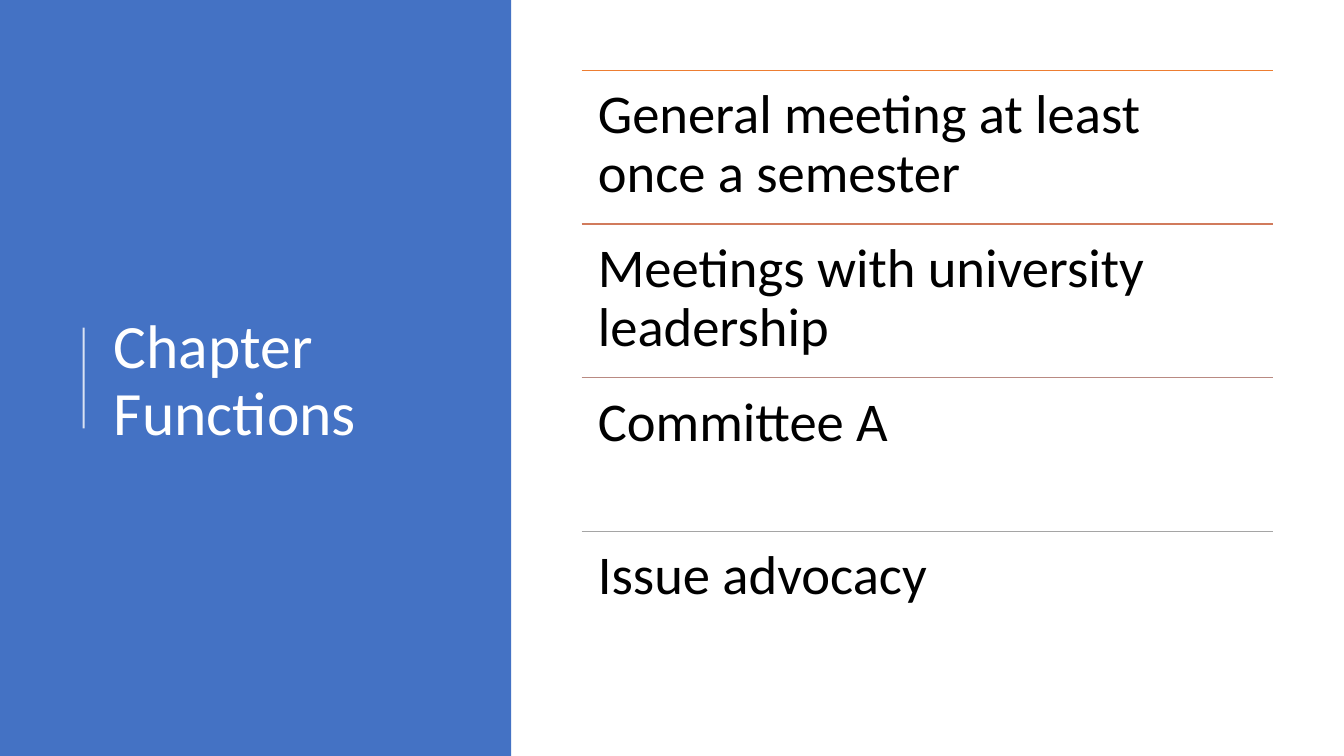
from dataclasses import dataclass

from lxml.etree import SubElement as Sub
from pptx import Presentation as Deck
from pptx.dml.color import RGBColor as Rgb
from pptx.enum.shapes import MSO_CONNECTOR as Link, MSO_SHAPE as Kind
from pptx.enum.text import MSO_ANCHOR as Anchor
from pptx.oxml.ns import qn
from pptx.slide import Slide
from pptx.util import Inches, Pt

WIDE, HIGH = 133.3, 75
LEFT, TOP, SPAN, STEP = 57.7, 7, 68.6, 15.24
INSET = 1.6


@dataclass
class Box:
    """Place on a grid of ten columns and ten rows to the inch."""
    col: float
    row: float
    cols: float
    rows: float


@dataclass
class Item:
    """One chapter function with the colour of its rule."""
    text: str
    hue: str


ITEMS = [
    Item("General meeting at least once a semester", "ED7D31"),
    Item("Meetings with university leadership", "D17B5C"),
    Item("Committee A", "B98A82"),
    Item("Issue advocacy", "A5A5A5"),
]


def grid(cells: float) -> int:
    """Turn grid cells into a length."""
    return Inches(cells / 10)


def tint(hue: str) -> Rgb:
    """Turn a hex string into a colour."""
    return Rgb.from_string(hue)


def apply(target: object, form: dict) -> None:
    """Set each format value on the target."""
    for name, value in form.items():
        setattr(target, name, value)


def panel(slide: Slide, box: Box, hue: str) -> None:
    """Draw a plain filled rectangle."""
    shape = slide.shapes.add_shape(
        Kind.RECTANGLE, grid(box.col), grid(box.row), grid(box.cols), grid(box.rows))
    shape.shadow.inherit = False
    shape.fill.solid()
    shape.fill.fore_color.rgb = tint(hue)
    shape.line.fill.background()


def rule(slide: Slide, box: Box, hue: str, weight: float, alpha: int = 100) -> None:
    """Draw a straight line across the box."""
    line = slide.shapes.add_connector(
        Link.STRAIGHT, grid(box.col), grid(box.row),
        grid(box.col + box.cols), grid(box.row + box.rows))
    line.line.color.rgb = tint(hue)
    line.line.width = Pt(weight)
    props = line.element.spPr
    if alpha < 100:
        Sub(props.find(".//" + qn("a:srgbClr")), qn("a:alpha"), val=str(alpha * 1000))
    Sub(props, qn("a:effectLst"))


def label(slide: Slide, box: Box, text: str, size: int, hue: str, form: dict) -> None:
    """Write one wrapped paragraph in the box."""
    frame = slide.shapes.add_textbox(
        grid(box.col), grid(box.row), grid(box.cols), grid(box.rows)).text_frame
    apply(frame, {"word_wrap": True, **form})
    para = frame.paragraphs[0]
    para.line_spacing = 0.9
    run = para.add_run()
    run.text = text
    apply(run.font, {"name": "Calibri", "size": Pt(size)})
    run.font.color.rgb = tint(hue)


def main() -> None:
    """Build and save the slide."""
    deck = Deck()
    apply(deck, {"slide_width": grid(WIDE), "slide_height": grid(HIGH)})
    slide = deck.slides.add_slide(deck.slide_layouts[6])

    panel(slide, Box(0, 0, 50.7, HIGH), "4472C4")
    label(slide, Box(10.3, 7.8, 36.9, 60.2), "Chapter Functions", 44, "FFFFFF",
          {"vertical_anchor": Anchor.MIDDLE})
    rule(slide, Box(8.3, 32.5, 0, 10), "FFFFFF", 1.5, 80)

    sides = ("left", "top", "right", "bottom")
    form = {f"margin_{side}": grid(INSET) for side in sides}
    form["vertical_anchor"] = Anchor.TOP
    for index, item in enumerate(ITEMS):
        row = TOP + index * STEP
        rule(slide, Box(LEFT, row, SPAN, 0), item.hue, 1)
        label(slide, Box(LEFT, row, SPAN, STEP), item.text, 39, "000000", form)

    deck.save("out.pptx")


if __name__ == "__main__":
    main()
